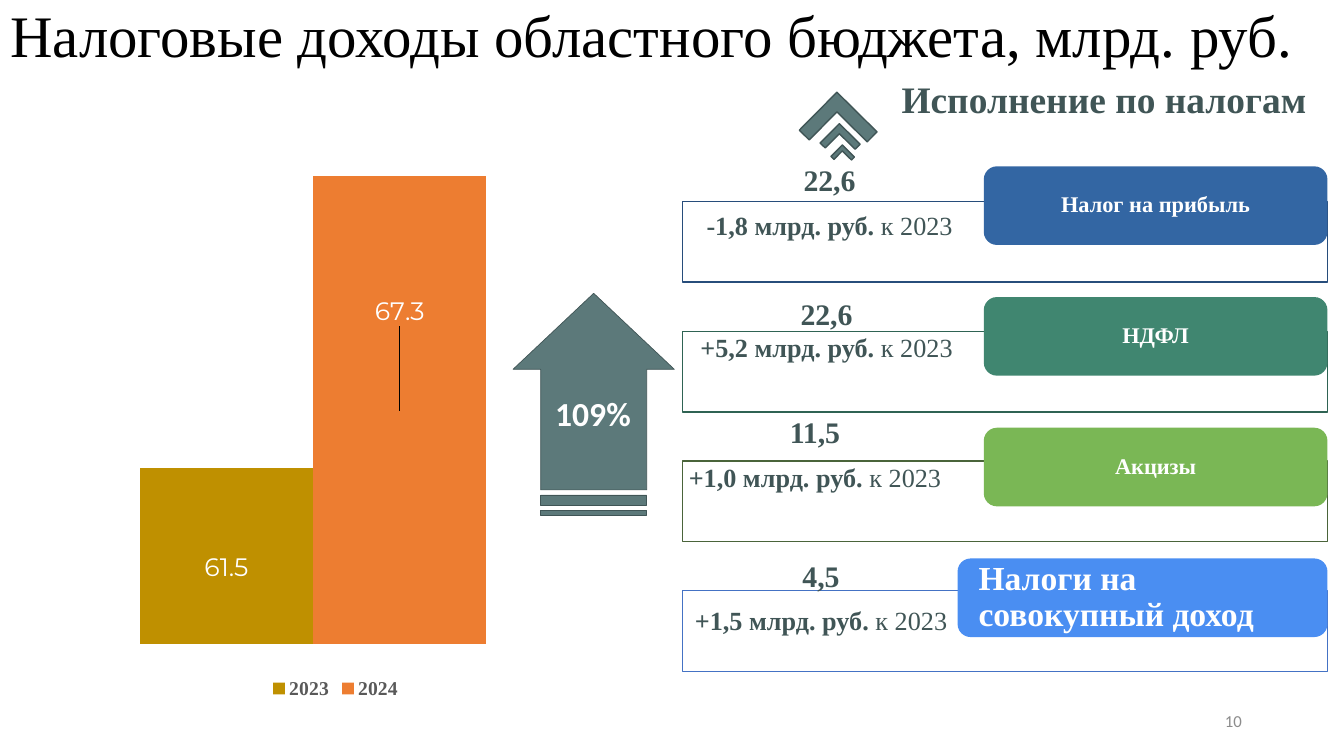
"""Build the slide on tax revenue of the regional budget."""
from dataclasses import dataclass

from lxml.etree import SubElement
from pptx import Presentation
from pptx.chart.data import CategoryChartData
from pptx.dml.color import RGBColor
from pptx.enum.chart import XL_CHART_TYPE as ChartType, XL_LABEL_POSITION as LabelPosition
from pptx.enum.chart import XL_LEGEND_POSITION as LegendPosition
from pptx.enum.shapes import MSO_SHAPE as Preset
from pptx.enum.text import MSO_ANCHOR as Anchor, MSO_AUTO_SIZE as AutoSize, PP_ALIGN as Align
from pptx.oxml import parse_xml
from pptx.oxml.ns import nsdecls, qn
from pptx.util import Inches, Pt

COLUMNS, ROWS = 160, 90
CELL = Inches(7.5) / ROWS

@dataclass(frozen=True)
class Style:
    size: float
    color: str
    bold: bool = True
    face: str = "Times New Roman"

@dataclass(frozen=True)
class Theme:
    white: str = "FFFFFF"
    slate: str = "5C797A"
    dark_slate: str = "405556"
    title: Style = Style(42, "000000", False)
    heading: Style = Style(26.7, dark_slate)
    growth: Style = Style(24, white, face="Calibri")
    amount: Style = Style(21.3, dark_slate)
    change: Style = Style(18.7, dark_slate)
    since: Style = Style(18.7, dark_slate, False)
    tab: Style = Style(16, white)
    large_tab: Style = Style(24, white)
    chart: Style = Style(10, "000000", False, "Calibri")
    legend: Style = Style(14, "595959")
    bar_label: Style = Style(18, white, False, "Montserrat")
    page_number: Style = Style(12, "8C8C8C", False, "Calibri")

THEME = Theme()

@dataclass(frozen=True)
class Area:
    left: float
    top: float
    width: float
    height: float

    def lengths(self) -> list[int]:
        return [round(CELL * cells) for cells in (self.left, self.top, self.width, self.height)]

@dataclass(frozen=True)
class Tax:
    name: str
    amount: str
    change: str
    fill: str
    line: str
    figures: Area
    tab_width: float = 40.92
    style: Style = THEME.tab
    align: Align = Align.CENTER
    gap: float = 8

@dataclass(frozen=True)
class Year:
    name: str
    value: float
    color: str
    label_shift: float

TAXES = [
    Tax("Налог на прибыль", "22,6", "-1,8", "3366A3", "274D7B", Area(80.52, 18.72, 36.48, 10.68)),
    Tax("НДФЛ", "22,6", "+5,2", "408670", "2F6353", Area(80.76, 34.56, 35.28, 9.24), gap=0),
    Tax("Акцизы", "11,5", "+1,0", "7AB755", "4A643A", Area(77.52, 48.72, 39, 10.68)),
    Tax("Налоги на совокупный доход", "4,5", "+1,5", "4A8EF2", "4472C4",
        Area(78.24, 65.76, 39, 10.68), 44.04, THEME.large_tab, Align.LEFT),
]
YEARS = [Year("2023", 61.5, "BF9000", 0.02), Year("2024", 67.3, "ED7D31", -0.17)]
CHEVRONS = [Area(96.6, 12.24, 6.36, 6.72), Area(98.4, 15.36, 3.24, 3.48), Area(99.36, 17.64, 1.92, 2.04)]
CARD_LEFT, CARD_RIGHT = 81.24, 158.04
CARD_TOP, CARD_PITCH, CARD_HEIGHT = 24, 15.44, 9.6
TAB_TOP, TAB_PITCH, TAB_HEIGHT = 19.8, 15.56, 9.36

def set_font(font, style: Style) -> None:
    font.name, font.size, font.bold = style.face, Pt(style.size), style.bold
    font.color.rgb = RGBColor.from_string(style.color)

def add_span(para, text: str, style: Style) -> None:
    span = para.add_run()
    span.text = text
    set_font(span.font, style)

def set_text(frame, text: str, style: Style, align: Align, anchor: Anchor, spacing: float = 1) -> None:
    frame.word_wrap, frame.vertical_anchor = True, anchor
    para = frame.paragraphs[0]
    para.alignment, para.line_spacing = align, spacing
    add_span(para, text, style)

def add_box(page, area: Area, text: str, style: Style, align: Align = Align.CENTER,
            anchor: Anchor = Anchor.TOP):
    frame = page.shapes.add_textbox(*area.lengths()).text_frame
    set_text(frame, text, style, align, anchor)
    return frame

def add_figure(page, preset: Preset, area: Area, fill: str, line: str | None = None,
               width: float = 1, rotation: float = 0, adjust: tuple[float, ...] = ()):
    shape = page.shapes.add_shape(preset, *area.lengths())
    shape.shadow.inherit = False
    shape.rotation = rotation
    for index, value in enumerate(adjust):
        shape.adjustments[index] = value
    shape.fill.solid()
    shape.fill.fore_color.rgb = RGBColor.from_string(fill)
    if line:
        shape.line.color.rgb = RGBColor.from_string(line)
        shape.line.width = Pt(width)
    else:
        shape.line.fill.background()
    return shape

def add_title(page) -> None:
    title = page.shapes.title
    title.left, title.top, title.width, title.height = Area(0, 0, COLUMNS, 9.24).lengths()
    title.text_frame.auto_size = AutoSize.NONE
    set_text(title.text_frame, "Налоговые доходы областного бюджета, млрд. руб.", THEME.title,
             Align.LEFT, Anchor.MIDDLE, 0.9)

def set_layout(parent, index: int, **values: float | str) -> None:
    for old in parent.findall(qn("c:layout")):
        parent.remove(old)
    layout = parse_xml(f"<c:layout {nsdecls('c')}><c:manualLayout/></c:layout>")
    for name, value in values.items():
        SubElement(layout[0], qn(f"c:{name}")).set("val", str(value))
    parent.insert(index, layout)

def add_bars(page) -> None:
    data = CategoryChartData()
    data.categories = ["1"]
    for year in YEARS:
        data.add_series(year.name, [year.value])
    area = Area(0, 14.76, 79.92, 69)
    chart = page.shapes.add_chart(ChartType.COLUMN_CLUSTERED, *area.lengths(), data).chart
    set_font(chart.font, THEME.chart)
    chart.has_title, chart.has_legend = False, True
    chart.legend.position, chart.legend.include_in_layout = LegendPosition.BOTTOM, False
    set_font(chart.legend.font, THEME.legend)
    axis = chart.value_axis
    axis.minimum_scale, axis.maximum_scale = 58, 68
    axis.has_major_gridlines = axis.visible = chart.category_axis.visible = False
    plot = chart.plots[0]
    plot.gap_width, plot.overlap, plot.vary_by_categories = 70, 0, False
    for year, series in zip(YEARS, plot.series):
        series.format.fill.solid()
        series.format.fill.fore_color.rgb = RGBColor.from_string(year.color)
        label = series.points[0].data_label
        set_font(label.font, THEME.bar_label)
        label.position = LabelPosition.CENTER
    for year, label in zip(YEARS, chart.element.iter(qn("c:dLbl"))):
        set_layout(label, 1, x=0, y=year.label_shift)
    set_layout(chart.element.find(".//" + qn("c:plotArea")), 0, layoutTarget="inner",
               xMode="edge", yMode="edge", x=0.118, y=0.029, w=0.697, h=0.869)

def add_card(page, row: int, tax: Tax) -> None:
    area = Area(CARD_LEFT, CARD_TOP + row * CARD_PITCH, CARD_RIGHT - CARD_LEFT, CARD_HEIGHT)
    card = add_figure(page, Preset.RECTANGLE, area, THEME.white, tax.line)
    SubElement(card.element.find(".//" + qn("a:srgbClr")), qn("a:alpha")).set("val", "90000")
    area = Area(CARD_RIGHT - tax.tab_width, TAB_TOP + row * TAB_PITCH, tax.tab_width, TAB_HEIGHT)
    frame = add_figure(page, Preset.ROUNDED_RECTANGLE, area, tax.fill).text_frame
    frame.margin_left = frame.margin_right = Inches(0.17)
    frame.margin_top = frame.margin_bottom = 0
    set_text(frame, tax.name, tax.style, tax.align, Anchor.MIDDLE, 0.9)
    para = add_box(page, tax.figures, tax.amount, THEME.amount).add_paragraph()
    para.alignment, para.space_before = Align.CENTER, Pt(tax.gap)
    add_span(para, f"{tax.change} млрд. руб. ", THEME.change)
    add_span(para, "к 2023", THEME.since)

def main() -> None:
    deck = Presentation()
    deck.slide_width, deck.slide_height = round(CELL * COLUMNS), round(CELL * ROWS)
    page = deck.slides.add_slide(deck.slide_layouts[5])
    add_title(page)
    add_bars(page)
    add_figure(page, Preset.STRIPED_RIGHT_ARROW, Area(57.48, 38.52, 26.4, 19.2), THEME.slate,
               THEME.dark_slate, 0.5, 270, (0.657, 0.471))
    add_box(page, Area(64.92, 46.2, 15.84, 6), "109%", THEME.growth, Align.LEFT)
    for row, tax in enumerate(TAXES):
        add_card(page, row, tax)
    add_box(page, Area(105.24, 8.52, 52.44, 6.6), "Исполнение по налогам", THEME.heading)
    for area in CHEVRONS:
        add_figure(page, Preset.CORNER, area, THEME.slate, THEME.dark_slate,
                   rotation=134.7, adjust=(0.26, 0.262))
    add_box(page, Area(113.04, 83.4, 36, 4.8), "10", THEME.page_number, Align.RIGHT, Anchor.MIDDLE)
    deck.save("out.pptx")

if __name__ == "__main__":
    main()
